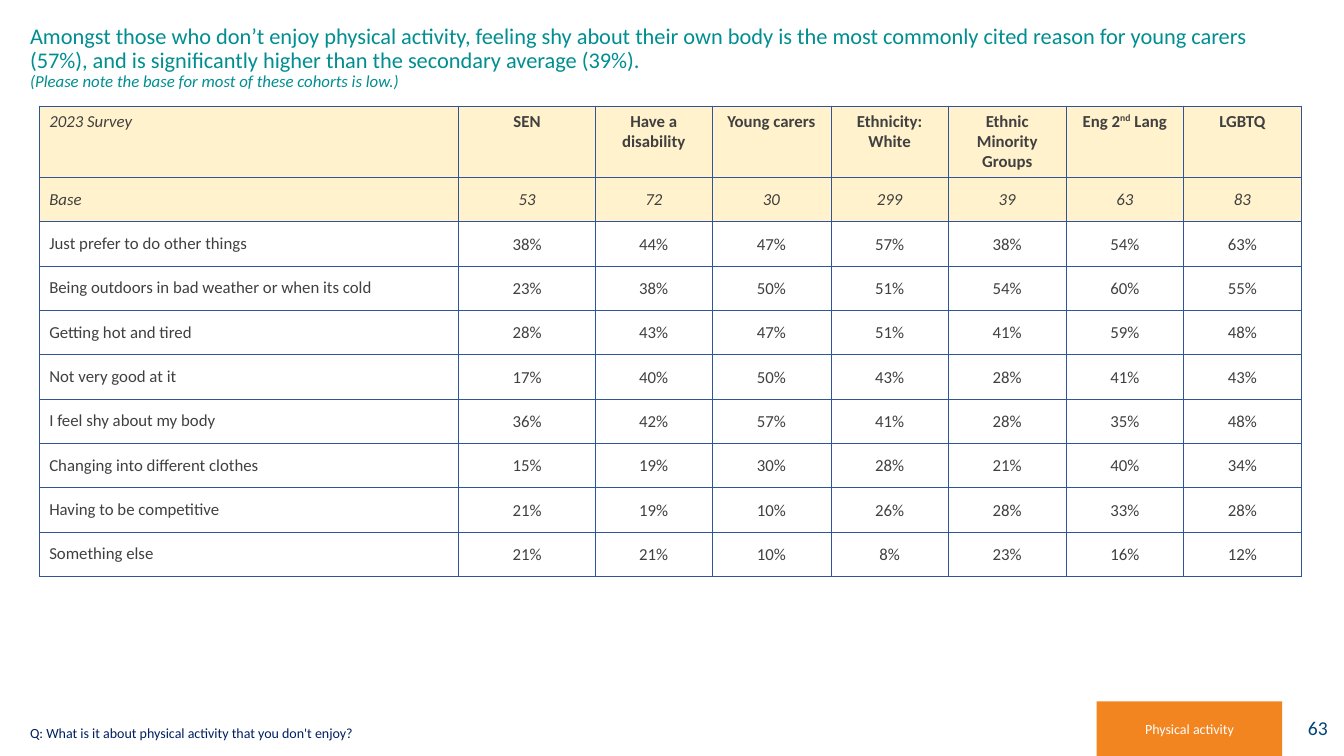
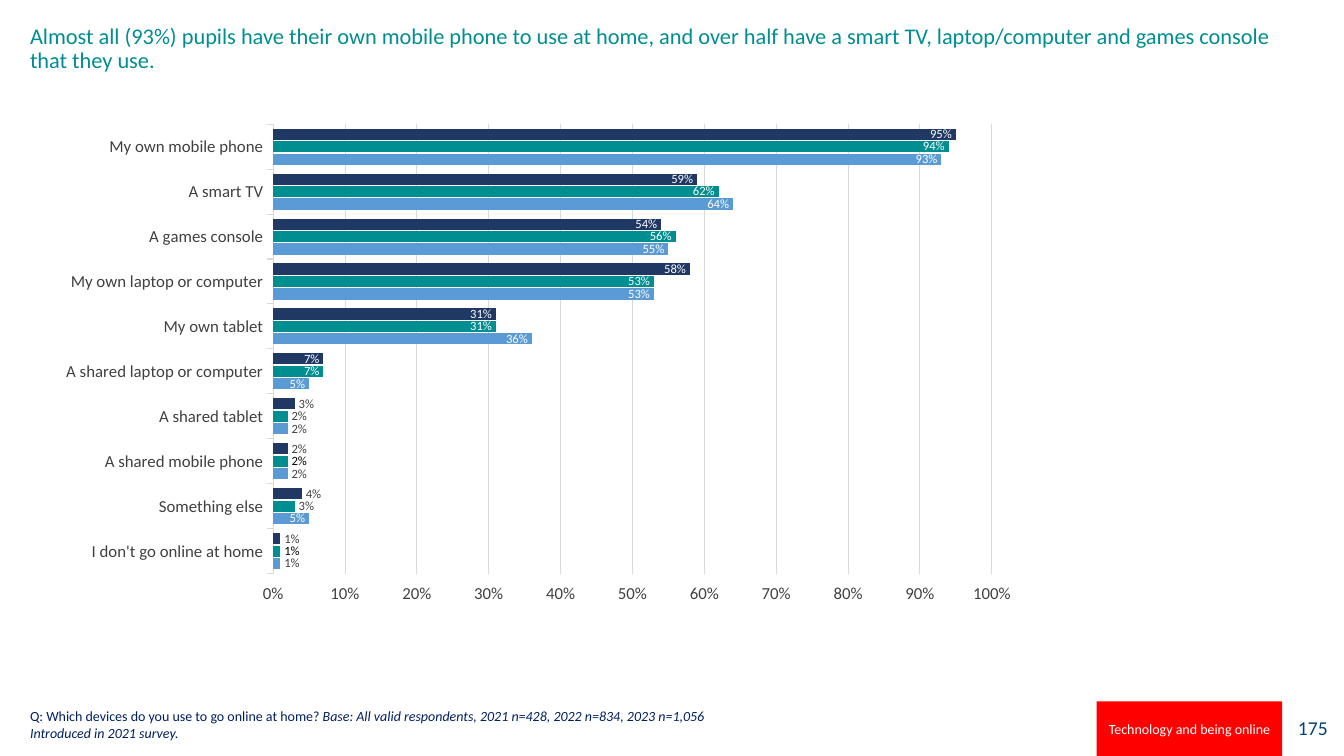
from lxml import etree
from pptx import Presentation
from pptx import util as u
from pptx.chart.data import CategoryChartData
from pptx.dml.color import RGBColor
from pptx.enum import chart as charts, shapes, text
from pptx.oxml import parse_xml
from pptx.oxml.ns import nsdecls, qn

FONT = "Calibri"
WHITE = RGBColor(0xFF, 0xFF, 0xFF)
BLACK = RGBColor(0, 0, 0)
TEAL = RGBColor(0x00, 0x8E, 0x91)
NAVY = RGBColor(0x00, 0x20, 0x60)
PAGE_BLUE = RGBColor(0x00, 0x43, 0x76)
GREY = RGBColor(0x40, 0x40, 0x40)
RULE_GREY = RGBColor(0xD9, 0xD9, 0xD9)
CREAM = RGBColor(0xFF, 0xF2, 0xCC)
ORANGE = RGBColor(0xF2, 0x85, 0x1F)
RED = RGBColor(0xFF, 0, 0)
LIGHT_BLUE = RGBColor(0x5B, 0x9B, 0xD5)
DARK_BLUE = RGBColor(0x20, 0x38, 0x64)
BORDER = RGBColor(0x2F, 0x55, 0x97)

LEFT, CENTRE, RIGHT = text.PP_ALIGN.LEFT, text.PP_ALIGN.CENTER, text.PP_ALIGN.RIGHT
TOP, MIDDLE, BOTTOM = text.MSO_ANCHOR.TOP, text.MSO_ANCHOR.MIDDLE, text.MSO_ANCHOR.BOTTOM

TITLE_BOX = (14.4, 14.4, 916, 70)
TAB_BOX = (783.4, 501, 132.5, 39)
NUMBER_BOX = (913, 500.5, 42.5, 39)
TABLE_BOX = (28, 75.75, 901.5, 336)
CHART_BOX = (14.4, 77.75, 723, 365)

SURVEY_HEADINGS = ["SEN", "Have a disability", "Young carers", "Ethnicity: White",
                   "Ethnic Minority Groups",
                   ["Eng 2", ("nd", {"superscript": True}), " Lang"], "LGBTQ"]
SURVEY_BASES = [53, 72, 30, 299, 39, 63, 83]
SURVEY_REASONS = {
    "Just prefer to do other things": [38, 44, 47, 57, 38, 54, 63],
    "Being outdoors in bad weather or when its cold": [23, 38, 50, 51, 54, 60, 55],
    "Getting hot and tired": [28, 43, 47, 51, 41, 59, 48],
    "Not very good at it": [17, 40, 50, 43, 28, 41, 43],
    "I feel shy about my body": [36, 42, 57, 41, 28, 35, 48],
    "Changing into different clothes": [15, 19, 30, 28, 21, 40, 34],
    "Having to be competitive": [21, 19, 10, 26, 28, 33, 28],
    "Something else": [21, 21, 10, 8, 23, 16, 12],
}
COLUMN_WIDTHS = [299.5, 98, 83, 85] + [84] * 4
HEADER_HEIGHT = 51

DEVICES = ["I don't go online at home", "Something else", "A shared mobile phone",
           "A shared tablet", "A shared laptop or computer", "My own tablet",
           "My own laptop or computer", "A games console", "A smart TV",
           "My own mobile phone"]
DEVICE_SERIES = [
    ("Series 1", LIGHT_BLUE, [0.01, 0.05, 0.02, 0.02, 0.05, 0.36, 0.53, 0.55, 0.64, 0.93]),
    ("Series 2", TEAL, [0.01, 0.03, 0.02, 0.02, 0.07, 0.31, 0.53, 0.56, 0.62, 0.94]),
    ("Series 3", DARK_BLUE, [0.01, 0.04, 0.02, 0.03, 0.07, 0.31, 0.58, 0.54, 0.59, 0.95]),
]
BLACK_LABELS = {("Series 2", 0), ("Series 2", 2)}
OUTSIDE_BELOW = 0.05


def points(box):
    return [u.Pt(length) for length in box]


def style_font(font, size, color, bold=False, italic=False):
    font.name = FONT
    font.size = u.Pt(size)
    font.bold = bold
    font.italic = italic
    font.color.rgb = color


def write(frame, lines, size=12, color=GREY, align=LEFT, anchor=TOP, spacing=None,
          bold=False, italic=False):
    frame.word_wrap = True
    frame.vertical_anchor = anchor
    for index, line in enumerate(lines):
        para = frame.add_paragraph() if index else frame.paragraphs[0]
        para.alignment = align
        if spacing:
            para.line_spacing = spacing
        for piece in [line] if isinstance(line, str) else line:
            words, changes = (piece, {}) if isinstance(piece, str) else piece
            span = para.add_run()
            span.text = words
            style_font(span.font, changes.get("size", size), color, bold,
                       changes.get("italic", italic))
            if changes.get("superscript"):
                span._r.get_or_add_rPr().set("baseline", "30000")


def add_text(page, box, lines, **style):
    write(page.shapes.add_textbox(*points(box)).text_frame, lines, **style)


def add_panel(page, box, fill, label, **style):
    panel = page.shapes.add_shape(shapes.MSO_SHAPE.RECTANGLE, *points(box))
    panel.shadow.inherit = False
    panel.fill.solid()
    panel.fill.fore_color.rgb = fill
    panel.line.fill.background()
    write(panel.text_frame, [label], anchor=MIDDLE, **style)


def add_page(deck, title, question, question_box, section, section_color, number):
    page = deck.slides.add_slide(deck.slide_layouts[6])
    add_panel(page, NUMBER_BOX, WHITE, number, size=14, color=PAGE_BLUE, align=RIGHT)
    add_text(page, TITLE_BOX, title, size=16, color=TEAL, spacing=0.9)
    add_text(page, question_box, question, size=10, color=NAVY, anchor=BOTTOM)
    add_panel(page, TAB_BOX, section_color, section, size=10, color=WHITE, align=CENTRE)
    return page


def add_borders(cell):
    properties = cell._tc.get_or_add_tcPr()
    for side in ("lnL", "lnR", "lnT", "lnB"):
        properties.append(parse_xml(
            f'<a:{side} {nsdecls("a")} w="{u.Pt(0.5)}"><a:solidFill>'
            f'<a:srgbClr val="{BORDER}"/></a:solidFill></a:{side}>'))


def add_survey_table(page, box):
    rows = [["2023 Survey"] + SURVEY_HEADINGS,
            ["Base"] + [str(base) for base in SURVEY_BASES]]
    rows += [[reason] + [f"{value}%" for value in values]
             for reason, values in SURVEY_REASONS.items()]
    table = page.shapes.add_table(len(rows), len(COLUMN_WIDTHS), *points(box)).table
    table.first_row = table.horz_banding = False
    for column, width in zip(table.columns, COLUMN_WIDTHS):
        column.width = u.Pt(width)
    body_height = (box[3] - HEADER_HEIGHT) / (len(rows) - 1)
    for r, row in enumerate(rows):
        table.rows[r].height = u.Pt(body_height if r else HEADER_HEIGHT)
        for c, content in enumerate(row):
            cell = table.cell(r, c)
            add_borders(cell)
            if r < 2:
                cell.fill.solid()
                cell.fill.fore_color.rgb = CREAM
            else:
                cell.fill.background()
                if c:
                    cell.margin_left = cell.margin_right = cell.margin_top = u.Pt(0.7)
                    cell.margin_bottom = 0
            cell.vertical_anchor = MIDDLE if r else TOP
            write(cell.text_frame, [content], align=CENTRE if c else LEFT,
                  anchor=None, bold=r == 0 and c > 0,
                  italic=r == 1 or (r == 0 and c == 0))


def set_plot_area(chart, x, y, w, h):
    area = chart._chartSpace.chart.plotArea
    for old in area.findall(qn("c:layout")):
        area.remove(old)
    layout = etree.Element(qn("c:layout"))
    manual = etree.SubElement(layout, qn("c:manualLayout"))
    settings = {"layoutTarget": "inner", "xMode": "edge", "yMode": "edge",
                "x": x, "y": y, "w": w, "h": h}
    for name, value in settings.items():
        etree.SubElement(manual, qn(f"c:{name}")).set("val", str(value))
    area.insert(0, layout)


def style_series(series, name, color, values):
    series.format.fill.solid()
    series.format.fill.fore_color.rgb = color
    labels = series.data_labels
    labels.show_value = True
    labels.number_format = "0%"
    labels.number_format_is_linked = False
    labels.position = charts.XL_LABEL_POSITION.INSIDE_END
    style_font(labels.font, 9, WHITE)
    for index, value in enumerate(values):
        if value < OUTSIDE_BELOW:
            label = series.points[index].data_label
            style_font(label.font, 9, BLACK if (name, index) in BLACK_LABELS else GREY)
            label.position = charts.XL_LABEL_POSITION.OUTSIDE_END


def add_device_chart(page, box):
    data = CategoryChartData(number_format="0%")
    data.categories = DEVICES
    for name, color, values in DEVICE_SERIES:
        data.add_series(name, values)
    chart = page.shapes.add_chart(charts.XL_CHART_TYPE.BAR_CLUSTERED,
                                  *points(box), data).chart
    chart.has_title = chart.has_legend = False
    style_font(chart.font, 10, BLACK)
    set_plot_area(chart, 0.25, 0.03, 0.71, 0.88)
    plot = chart.plots[0]
    plot.gap_width, plot.overlap = 80, -12
    plot.vary_by_categories = False
    for series, entry in zip(plot.series, DEVICE_SERIES):
        style_series(series, *entry)
    for axis in (chart.category_axis, chart.value_axis):
        style_font(axis.tick_labels.font, 12, GREY)
        axis.major_tick_mark = charts.XL_TICK_MARK.OUTSIDE
        axis.minor_tick_mark = charts.XL_TICK_MARK.NONE
    scale = chart.value_axis
    scale.minimum_scale, scale.maximum_scale, scale.major_unit = 0, 1, 0.1
    scale.tick_labels.number_format = "0%"
    scale.tick_labels.number_format_is_linked = False
    scale.format.line.fill.background()
    scale.has_major_gridlines = True
    for line in (scale.major_gridlines.format.line, chart.category_axis.format.line):
        line.color.rgb = RULE_GREY
        line.width = u.Pt(0.75)


def add_activity_page(deck):
    page = add_page(
        deck,
        ["Amongst those who don’t enjoy physical activity, feeling shy about their own body "
         "is the most commonly cited reason for young carers (57%), and is significantly "
         "higher than the secondary average (39%).",
         [("(Please note the base for most of these cohorts is low.)",
           {"size": 12, "italic": True})]],
        ["Q: What is it about physical activity that you don't enjoy?"],
        (14.4, 513.4, 330, 19.4), "Physical activity", ORANGE, "63")
    add_survey_table(page, TABLE_BOX)


def add_devices_page(deck):
    page = add_page(
        deck,
        ["Almost all (93%) pupils have their own mobile phone to use at home, and over half "
         "have a smart TV, laptop/computer and games console that they use."],
        [["Q: Which devices do you use to go online at home? ",
          ("Base: All valid respondents, 2021 n=428, 2022 n=834, 2023 n=1,056",
           {"italic": True})],
         [("Introduced in 2021 survey.", {"italic": True})]],
        (14.4, 501, 805.5, 31.8), "Technology and being online", RED, "175")
    add_device_chart(page, CHART_BOX)


def main():
    deck = Presentation()
    deck.slide_width, deck.slide_height = u.Pt(960), u.Pt(540)
    add_activity_page(deck)
    add_devices_page(deck)
    deck.save("out.pptx")


if __name__ == "__main__":
    main()
